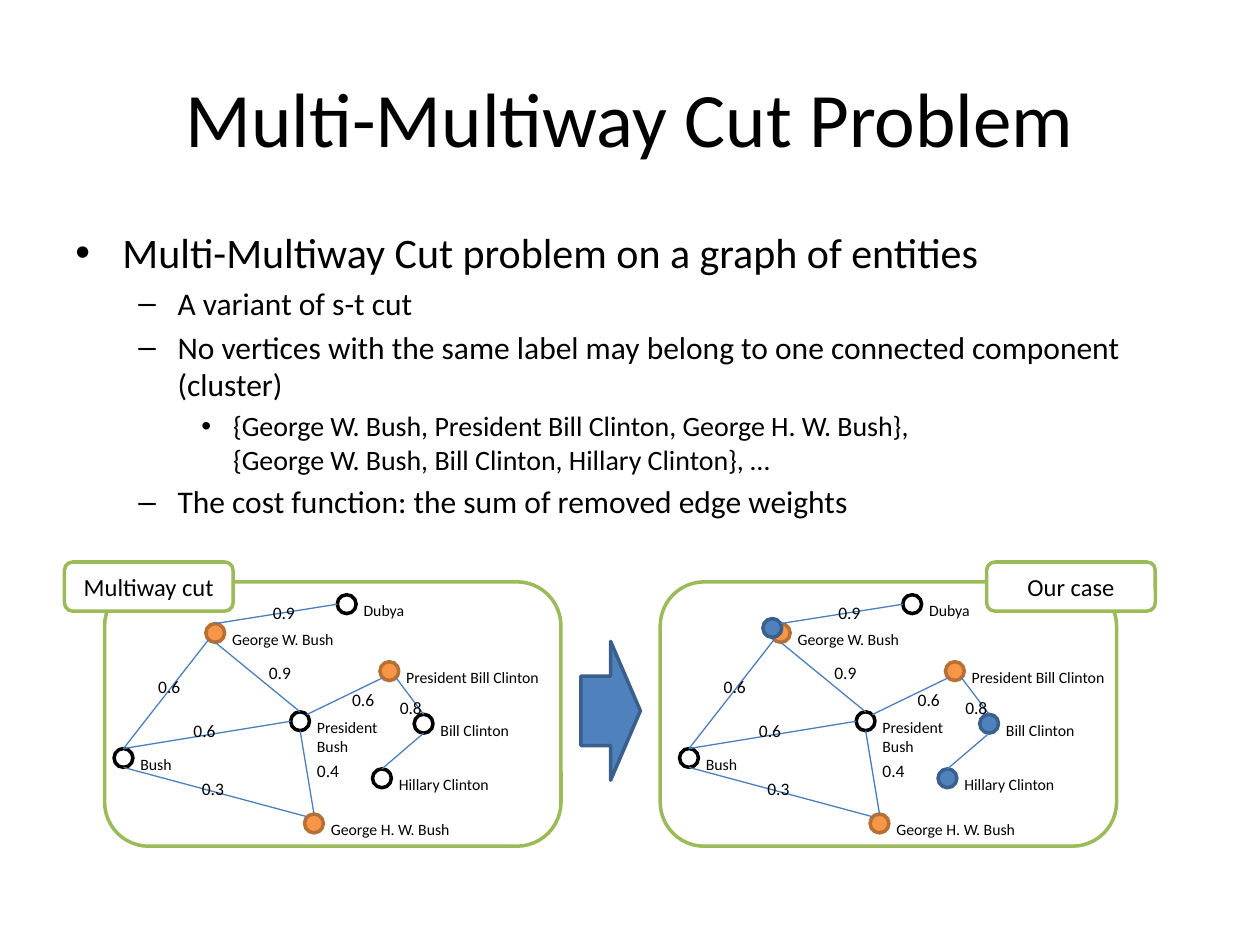
"""Build a slide that compares multiway cut with multi-multiway cut on an entity graph."""
from dataclasses import dataclass
from math import cos, radians, sin

from lxml import etree
from pptx import Presentation
from pptx import util as u
from pptx.dml.color import RGBColor
from pptx.enum import shapes, text
from pptx.oxml.ns import qn


@dataclass(frozen=True)
class Theme:
    font: str = "Calibri"
    ink: str = "000000"
    paper: str = "FFFFFF"
    blue: str = "4F81BD"
    blue_rim: str = "3A5F8C"
    orange: str = "F79646"
    orange_rim: str = "B76F34"
    green: str = "9BBB59"
    edge: str = "4B7EBC"
    title: float = 44
    body: tuple = (24, 18, 16)
    tag: float = 14
    weight: float = 10
    name: float = 9
    rim: float = 2
    thin: float = 0.75


THEME = Theme()
PLAIN = (THEME.paper, THEME.ink)
ORANGE = (THEME.orange, THEME.orange_rim)
BLUE = (THEME.blue, THEME.blue_rim)

BULLETS = [
    (0, "Multi-Multiway Cut problem on a graph of entities"),
    (1, "A variant of s-t cut"),
    (1, "No vertices with the same label may belong to one connected component (cluster)"),
    (2, "{George W. Bush, President Bill Clinton, George H. W. Bush},\v"
        "{George W. Bush, Bill Clinton, Hillary Clinton}, …"),
    (1, "The cost function: the sum of removed edge weights"),
]
LEVELS = [("•", 0.95, 0.95), ("–", 2.06, 0.79), ("•", 3.18, 0.64)]

NODE = 0.38
NODES = {
    "George W. Bush": (1.85, 0.58, 2.84, ORANGE),
    "Dubya": (4.5, 0, 2.34, PLAIN),
    "Bush": (0, 3.1, 2.34, PLAIN),
    "President Bush": (3.56, 2.36, 2.34, PLAIN),
    "George H. W. Bush": (3.84, 4.42, 3.48, ORANGE),
    "President Bill Clinton": (5.36, 1.35, 3.56, ORANGE),
    "Hillary Clinton": (5.21, 3.51, 2.69, PLAIN),
    "Bill Clinton": (6.05, 2.41, 2.69, PLAIN),
}
RIGHT, LOWER_RIGHT, BOTTOM, LOWER_LEFT, LEFT, UPPER_LEFT, TOP, UPPER_RIGHT = range(0, 360, 45)
EDGES = [
    ("George H. W. Bush", TOP, "President Bush", BOTTOM),
    ("George W. Bush", BOTTOM, "President Bush", TOP),
    ("Bush", TOP, "President Bush", LEFT),
    ("George W. Bush", TOP, "Dubya", LEFT),
    ("Bush", BOTTOM, "George H. W. Bush", UPPER_LEFT),
    ("George W. Bush", LOWER_LEFT, "Bush", TOP),
    ("President Bush", UPPER_RIGHT, "President Bill Clinton", LOWER_LEFT),
    ("Bill Clinton", TOP, "President Bill Clinton", LOWER_RIGHT),
    ("Hillary Clinton", TOP, "Bill Clinton", BOTTOM),
]
WEIGHTS = [
    ("0.9", 2.95, 0.03), ("0.4", 3.84, 3.2), ("0.6", 0.64, 1.52), ("0.6", 1.35, 2.41),
    ("0.3", 1.52, 3.56), ("0.9", 2.87, 1.24), ("0.6", 4.55, 1.78), ("0.8", 5.51, 1.93),
]


def cm(*lengths):
    """Turn centimetre values into lengths."""
    return [u.Cm(length) for length in lengths]


def write(para, words, size):
    """Put formatted words into a paragraph."""
    para.text = words
    for span in para.runs:
        for key, value in {"name": THEME.font, "size": u.Pt(size)}.items():
            setattr(span.font, key, value)
        span.font.color.rgb = RGBColor.from_string(THEME.ink)
    for line_break in para._p.findall(qn("a:br")):
        etree.SubElement(line_break, qn("a:rPr"), sz=str(size * 100))


def add_label(parent, words, size, *frame):
    """Add a left-aligned text box that grows with its words."""
    box = parent.shapes.add_textbox(*cm(*frame))
    for key, value in {"word_wrap": True, "auto_size": text.MSO_AUTO_SIZE.SHAPE_TO_FIT_TEXT}.items():
        setattr(box.text_frame, key, value)
    write(box.text_frame.paragraphs[0], words, size)


def add_preset(parent, kind, fill, rim, *frame):
    """Add a preset shape, hollow when no fill is given."""
    shape = parent.shapes.add_shape(kind, *cm(*frame))
    shape.shadow.inherit = False
    if fill:
        shape.fill.solid()
        shape.fill.fore_color.rgb = RGBColor.from_string(fill)
    else:
        shape.fill.background()
    shape.line.color.rgb = RGBColor.from_string(rim)
    shape.line.width = u.Pt(THEME.rim)
    return shape


def add_node(parent, left, top, colours):
    """Add a round graph vertex."""
    add_preset(parent, shapes.MSO_SHAPE.OVAL, *colours, left, top, NODE, NODE)


def add_edge(parent, start, end):
    """Add a thin straight edge between two points."""
    edge = parent.shapes.add_connector(shapes.MSO_CONNECTOR.STRAIGHT, *cm(*start, *end))
    edge.line.color.rgb = RGBColor.from_string(THEME.edge)
    edge.line.width = u.Pt(THEME.thin)
    etree.SubElement(edge._element.spPr, qn("a:effectLst"))


def add_graph(page, left, top, recoloured, twin=None):
    """Add the grouped entity graph, with some vertices recoloured and an optional twin vertex."""
    group = page.shapes.add_group_shape()

    def rim_point(name, angle):
        """Find the point on a vertex at an angle."""
        x, y = NODES[name][:2]
        turn = radians(angle)
        return (left + x + NODE / 2 * (1 + cos(turn)), top + y + NODE / 2 * (1 + sin(turn)))

    for name, (x, y, width, colours) in NODES.items():
        add_node(group, left + x, top + y, recoloured.get(name, colours))
        add_label(group, name, THEME.name, left + x + 0.28, top + y, width, 0.58)
    if twin:
        add_node(group, left + twin[0], top + twin[1], BLUE)
    for first, first_angle, second, second_angle in EDGES:
        add_edge(group, rim_point(first, first_angle), rim_point(second, second_angle))
    for weight, x, y in WEIGHTS:
        add_label(group, weight, THEME.weight, left + x, top + y, 1.07, 0.56)


def add_panel(page, left, tag_left, caption):
    """Add a hollow rounded frame and its caption tag."""
    kind = shapes.MSO_SHAPE.ROUNDED_RECTANGLE
    add_preset(page, kind, None, THEME.green, left, 11.73, 9.2, 5.33)
    tag = add_preset(page, kind, THEME.paper, THEME.green, tag_left, 11.33, 3.4, 0.99)
    tag.text_frame.vertical_anchor = text.MSO_ANCHOR.MIDDLE
    para = tag.text_frame.paragraphs[0]
    para.alignment = text.PP_ALIGN.CENTER
    write(para, caption, THEME.tag)


def add_title(page, words):
    """Place and format the title placeholder."""
    title = page.shapes.title
    for key, value in zip(("left", "top", "width", "height"), cm(1.27, 0.76, 22.86, 3.18)):
        setattr(title, key, value)
    title.text_frame.vertical_anchor = text.MSO_ANCHOR.MIDDLE
    para = title.text_frame.paragraphs[0]
    para.alignment = text.PP_ALIGN.CENTER
    write(para, words, THEME.title)


def add_bullets(page):
    """Add the bulleted outline."""
    frame = page.shapes.add_textbox(*cm(1.27, 4.45, 22.86, 12.57)).text_frame
    frame.word_wrap = True
    for index, (level, words) in enumerate(BULLETS):
        para = frame.add_paragraph() if index else frame.paragraphs[0]
        mark, margin, hang = LEVELS[level]
        props = para._p.get_or_add_pPr()
        for key, value in {"marL": u.Cm(margin), "indent": -u.Cm(hang)}.items():
            props.set(key, str(value))
        etree.SubElement(props, qn("a:buFont"), typeface="Arial")
        etree.SubElement(props, qn("a:buChar"), char=mark)
        size = THEME.body[level]
        para.level = level
        para.space_before = u.Pt(size * 0.2 if index else 0)
        write(para, words, size)


def main():
    """Build and save the deck."""
    deck = Presentation()
    deck.slide_width, deck.slide_height = cm(25.4, 19.05)
    page = deck.slides.add_slide(deck.slide_layouts[5])
    add_title(page, "Multi-Multiway Cut Problem")
    add_bullets(page)
    clintons = {"Hillary Clinton": BLUE, "Bill Clinton": BLUE}
    add_graph(page, 13.7, 11.99, clintons, twin=(1.68, 0.48))
    add_graph(page, 2.3, 11.99, {})
    add_preset(page, shapes.MSO_SHAPE.RIGHT_ARROW, *BLUE, 11.71, 12.93, 1.2, 2.8)
    add_panel(page, 2.11, 1.3, "Multiway cut")
    add_panel(page, 13.31, 19.89, "Our case")
    deck.save("out.pptx")


if __name__ == "__main__":
    main()
